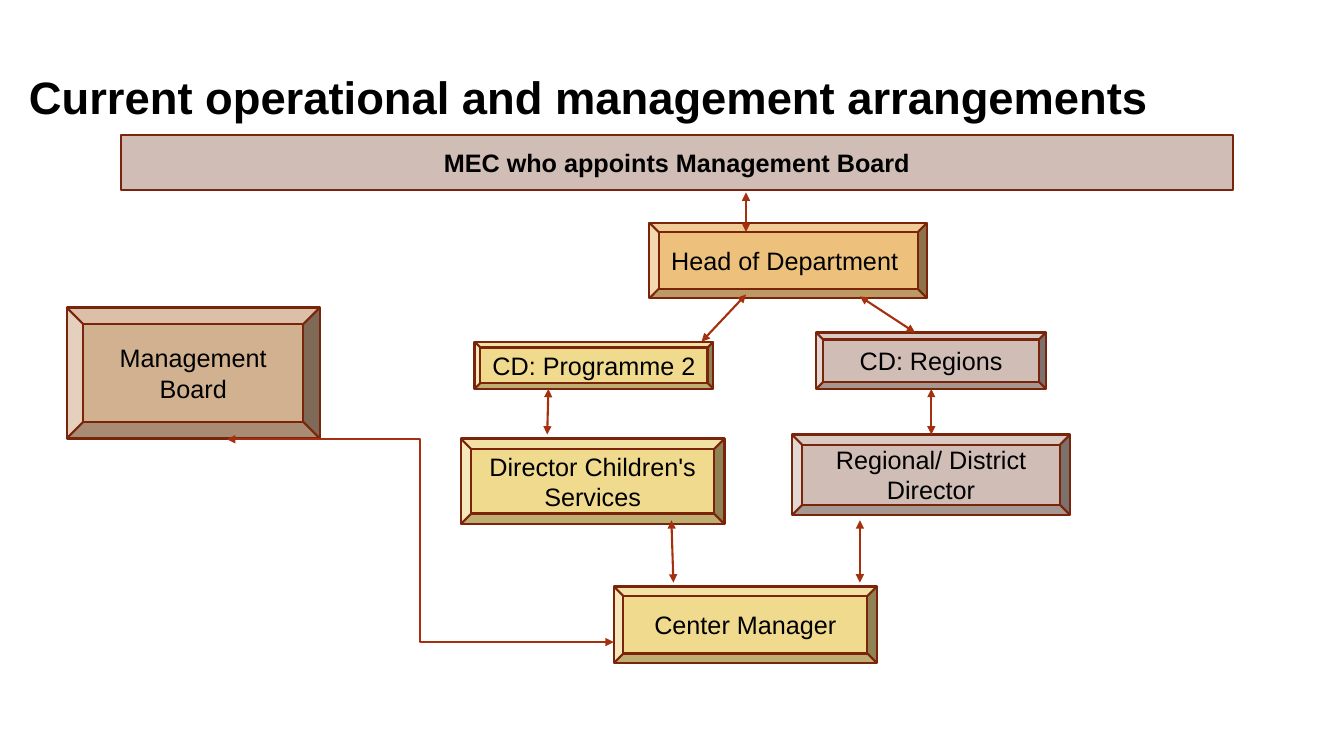
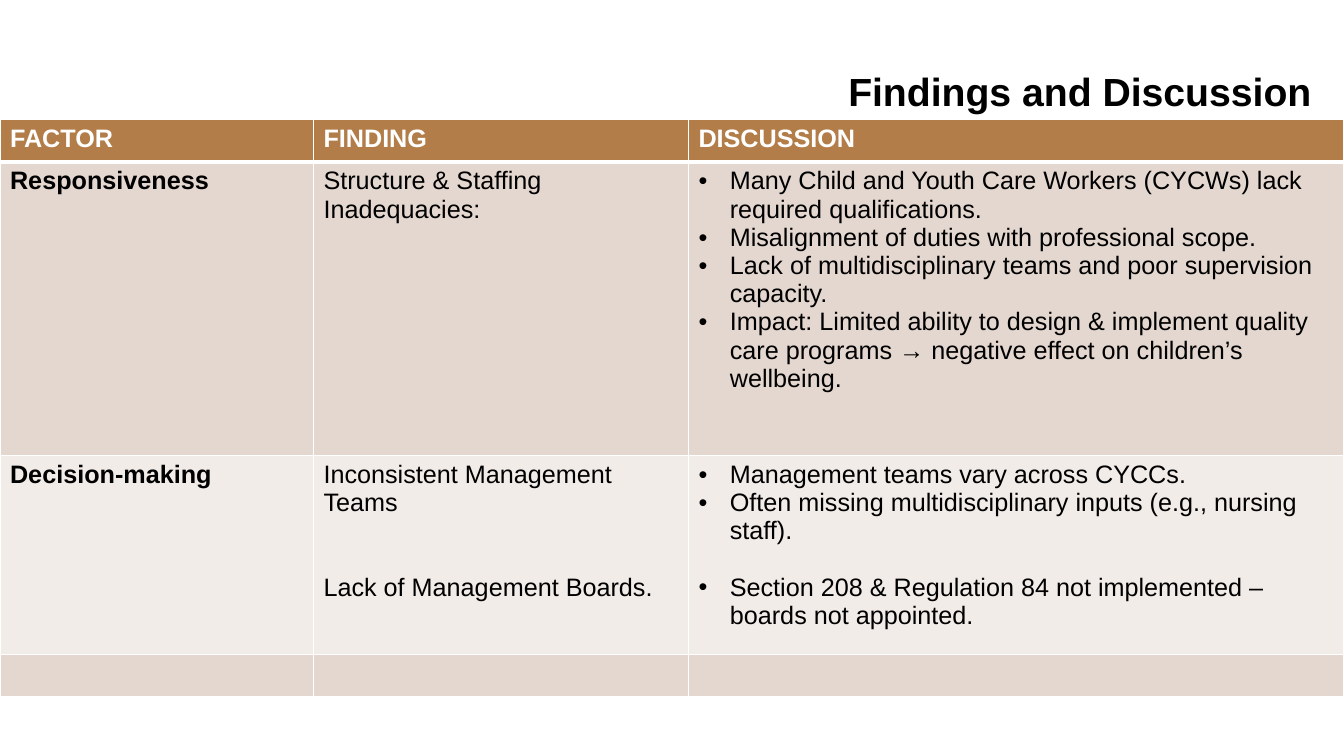
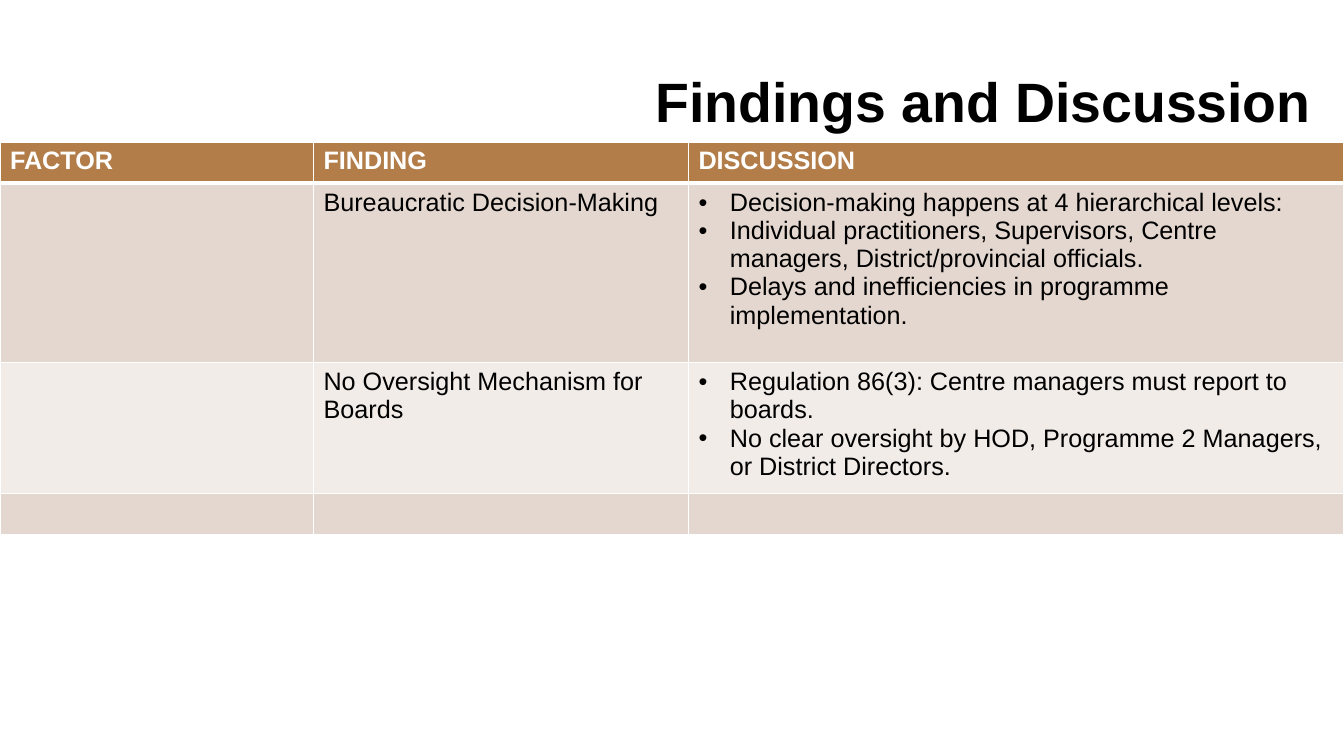
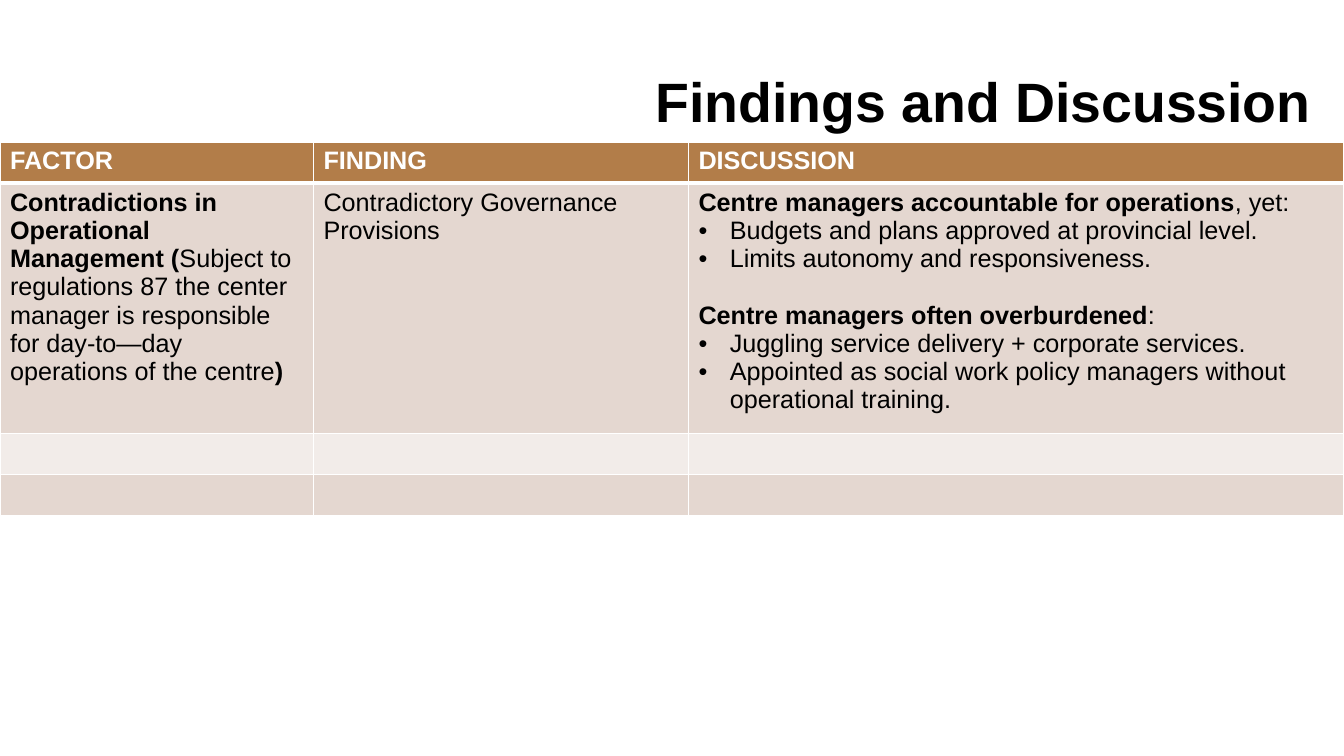
"""Build four slides on care centre governance: a chart of roles and three tables of findings."""
from dataclasses import dataclass

from lxml import etree
from pptx import Presentation
from pptx import util as u
from pptx.dml.color import RGBColor
from pptx.enum import shapes, text
from pptx.oxml.ns import qn

FONT = "Arial"
BLACK, WHITE = "000000", "FFFFFF"
EDGE, ARROW = "7A240B", "A5300F"
MAUVE, GOLD, TAN, AMBER = "D0BDB6", "EFDA8E", "D2B191", "EDC17C"
HEAD, DARK, LIGHT = "B27D49", "E4D7D0", "F2ECE9"
BODY = 18
WIDE = 33.87
COLS = (7.9, 9.45, 16.52)
INDENT = 0.79


@dataclass
class Run:
    words: str
    bold: bool = False


@dataclass
class Par:
    runs: list[Run]
    dot: bool = False
    gap: float = 0


@dataclass
class Box:
    label: str
    place: tuple[float, float, float, float]
    fill: str
    kind: int = shapes.MSO_SHAPE.BEVEL
    bold: bool = False


@dataclass
class Link:
    ends: tuple[float, float, float, float]
    kind: int = shapes.MSO_CONNECTOR.STRAIGHT


@dataclass
class Page:
    size: float
    high: float
    top: float
    tall: tuple[float, ...]
    rows: list[list[list[Par]]]


def plain(words: str, gap: float = 0) -> Par:
    """Make a plain paragraph."""
    return Par([Run(words)], gap=gap)


def strong(words: str, rest: str = "", gap: float = 0) -> Par:
    """Make a paragraph that opens in bold."""
    return Par([Run(words, True)] + ([Run(rest)] if rest else []), gap=gap)


def dot(words: str, gap: float = 0) -> Par:
    """Make a bulleted paragraph."""
    return Par([Run(words)], True, gap)


BOXES = [
    Box("MEC who appoints Management Board", (3.05, 3.4, 28.02, 1.4), MAUVE, shapes.MSO_SHAPE.RECTANGLE, True),
    Box("Center Manager", (15.47, 14.78, 6.63, 1.93), GOLD),
    Box("Management Board", (1.68, 7.75, 6.38, 3.3), TAN),
    Box("Head of Department ", (16.36, 5.61, 7.01, 1.91), AMBER),
    Box("Regional/ District Director", (19.96, 10.95, 7.01, 2.03), MAUVE),
    Box("Director Children's Services", (11.61, 11.05, 6.65, 2.16), GOLD),
    Box("CD: Regions", (20.57, 8.38, 5.79, 1.42), MAUVE),
    Box("CD: Programme 2", (11.96, 8.61, 6.02, 1.19), GOLD),
]

LINKS = [
    Link((16.92, 13.11, 16.97, 14.68)),
    Link((21.67, 14.68, 21.67, 13.11)),
    Link((23.47, 9.8, 23.47, 10.95)),
    Link((13.82, 9.8, 13.79, 10.95)),
    Link((18.8, 7.42, 17.68, 8.61)),
    Link((21.67, 7.47, 23.06, 8.38)),
    Link((5.72, 11.07, 15.47, 16.18), shapes.MSO_CONNECTOR.ELBOW),
    Link((18.8, 4.85, 18.8, 5.84)),
]

PAGES = [
    Page(28, 1.35, 3.02, (1.06, 7.39, 5.03, 1.06), [
        [
            [strong("Responsiveness")],
            [plain("Structure & Staffing Inadequacies:")],
            [
                dot("Many Child and Youth Care Workers (CYCWs) lack required qualifications."),
                dot("Misalignment of duties with professional scope."),
                dot("Lack of multidisciplinary teams and poor supervision capacity."),
                dot("Impact: Limited ability to design & implement quality care programs → "
                    "negative effect on children’s wellbeing."),
            ],
        ],
        [
            [strong("Decision-making")],
            [plain("Inconsistent Management Teams"), plain("Lack of Management Boards.", 40.4)],
            [
                dot("Management teams vary across CYCCs."),
                dot("Often missing multidisciplinary inputs (e.g., nursing staff)."),
                dot("Section 208 & Regulation 84 not implemented – boards not appointed.", 20.2),
            ],
        ],
        [[], [], []],
    ]),
    Page(39.6, 1.9, 3.58, (1.04, 4.52, 3.12, 1.04), [
        [
            [],
            [plain("Bureaucratic Decision-Making")],
            [
                dot("Decision-making happens at 4 hierarchical levels:"),
                dot("Individual practitioners, Supervisors, Centre managers, District/provincial officials."),
                dot("Delays and inefficiencies in programme implementation."),
            ],
        ],
        [
            [],
            [plain("No Oversight Mechanism for Boards")],
            [
                dot("Regulation 86(3): Centre managers must report to boards."),
                dot("No clear oversight by HOD, Programme 2 Managers, or District Directors."),
            ],
        ],
        [[], [], []],
    ]),
    Page(39.6, 1.9, 3.58, (1.04, 5.95, 1.04, 1.04), [
        [
            [Par([
                Run("Contradictions in Operational Management (", True),
                Run("Subject to regulations 87 the center manager is responsible for "
                    "day-to—day operations of the centre"),
                Run(")", True),
            ])],
            [plain("Contradictory Governance Provisions")],
            [
                strong("Centre managers accountable for operations", ", yet:"),
                dot("Budgets and plans approved at provincial level."),
                dot("Limits autonomy and responsiveness."),
                strong("Centre managers often overburdened", ":", 20.2),
                dot("Juggling service delivery + corporate services."),
                dot("Appointed as social work policy managers without operational training."),
            ],
        ],
        [[], [], []],
        [[], [], []],
    ]),
]


def tint(code: str) -> RGBColor:
    """Turn a hex string into a colour."""
    return RGBColor.from_string(code)


def add_run(par, run: Run, size: float = BODY, ink: str = BLACK) -> None:
    """Add one styled run to a paragraph."""
    bit = par.add_run()
    bit.text = run.words
    bit.font.name = FONT
    bit.font.size = u.Pt(size)
    bit.font.bold = run.bold
    bit.font.color.rgb = tint(ink)


def add_title(slide, words: str, place: tuple[float, ...], size: float, side: int) -> None:
    """Draw the slide title."""
    frame = slide.shapes.add_textbox(*map(u.Cm, place)).text_frame
    frame.word_wrap = True
    frame.vertical_anchor = text.MSO_ANCHOR.MIDDLE
    par = frame.paragraphs[0]
    par.alignment = side
    par.line_spacing = 0.9
    add_run(par, Run(words, True), size)


def add_box(slide, box: Box) -> None:
    """Draw one role box."""
    shape = slide.shapes.add_shape(box.kind, *map(u.Cm, box.place))
    shape.shadow.inherit = False
    shape.fill.solid()
    shape.fill.fore_color.rgb = tint(box.fill)
    shape.line.color.rgb = tint(EDGE)
    shape.line.width = u.Pt(1.5)
    frame = shape.text_frame
    frame.word_wrap = True
    frame.vertical_anchor = text.MSO_ANCHOR.MIDDLE
    par = frame.paragraphs[0]
    par.alignment = text.PP_ALIGN.CENTER
    add_run(par, Run(box.label, box.bold))


def add_link(slide, link: Link) -> None:
    """Draw one line with an arrow at both ends."""
    wire = slide.shapes.add_connector(link.kind, *map(u.Cm, link.ends))
    wire.line.color.rgb = tint(ARROW)
    wire.line.width = u.Pt(1.5)
    line = wire.line._get_or_add_ln()
    for end in ("a:headEnd", "a:tailEnd"):
        etree.SubElement(line, qn(end), type="triangle")
    etree.SubElement(wire._element.spPr, qn("a:effectLst"))


def add_edge(cell, side: str, width: float) -> None:
    """Draw one white border of a cell."""
    line = etree.Element(qn(f"a:ln{side}"), w=str(u.Pt(width)))
    fill = etree.SubElement(line, qn("a:solidFill"))
    etree.SubElement(fill, qn("a:srgbClr"), val=WHITE)
    cell._tc.get_or_add_tcPr().append(line)


def add_dot(par) -> None:
    """Give a paragraph a hanging bullet."""
    props = par._p.get_or_add_pPr()
    props.set("marL", str(u.Cm(INDENT)))
    props.set("indent", str(-u.Cm(INDENT)))
    etree.SubElement(props, qn("a:buFont"), typeface=FONT)
    etree.SubElement(props, qn("a:buChar"), char="•")


def fill_cell(cell, pars: list[Par], row: int) -> None:
    """Set the borders, fill and text of a cell."""
    for side in "LRTB":
        thick = (row, side) in ((0, "B"), (1, "T"))
        add_edge(cell, side, 3 if thick else 1)
    cell.fill.solid()
    cell.fill.fore_color.rgb = tint(HEAD if row == 0 else DARK if row % 2 else LIGHT)
    frame = cell.text_frame
    for spot, item in enumerate(pars):
        par = frame.add_paragraph() if spot else frame.paragraphs[0]
        if item.dot:
            add_dot(par)
        if item.gap:
            par.space_before = u.Pt(item.gap)
        for run in item.runs:
            add_run(par, run, ink=WHITE if row == 0 else BLACK)


def add_page(slide, page: Page) -> None:
    """Draw a title and a table of findings."""
    add_title(slide, "Findings and Discussion", (0.66, 1.68, 32.64, page.high), page.size, text.PP_ALIGN.RIGHT)
    heads = [[strong(word)] for word in ("FACTOR", "FINDING", "DISCUSSION")]
    rows = [heads] + page.rows
    place = (0, page.top, WIDE, sum(page.tall))
    grid = slide.shapes.add_table(len(rows), len(COLS), *map(u.Cm, place)).table
    grid.first_row = grid.horz_banding = False
    for col, width in zip(grid.columns, COLS):
        col.width = u.Cm(width)
    for row, (cells, height) in enumerate(zip(rows, page.tall)):
        grid.rows[row].height = u.Cm(height)
        for col, pars in enumerate(cells):
            fill_cell(grid.cell(row, col), pars, row)


def add_chart(slide) -> None:
    """Draw the chart of roles."""
    add_title(slide, "Current operational and management arrangements",
              (0.48, 1.73, 33.12, 1.57), 32.4, text.PP_ALIGN.LEFT)
    for box in BOXES:
        add_box(slide, box)
    for link in LINKS:
        add_link(slide, link)


def main() -> None:
    """Build and save the slides."""
    deck = Presentation()
    deck.slide_width, deck.slide_height = u.Cm(WIDE), u.Cm(19.05)
    blank = deck.slide_layouts[6]
    add_chart(deck.slides.add_slide(blank))
    for page in PAGES:
        add_page(deck.slides.add_slide(blank), page)
    deck.save("out.pptx")


if __name__ == "__main__":
    main()
